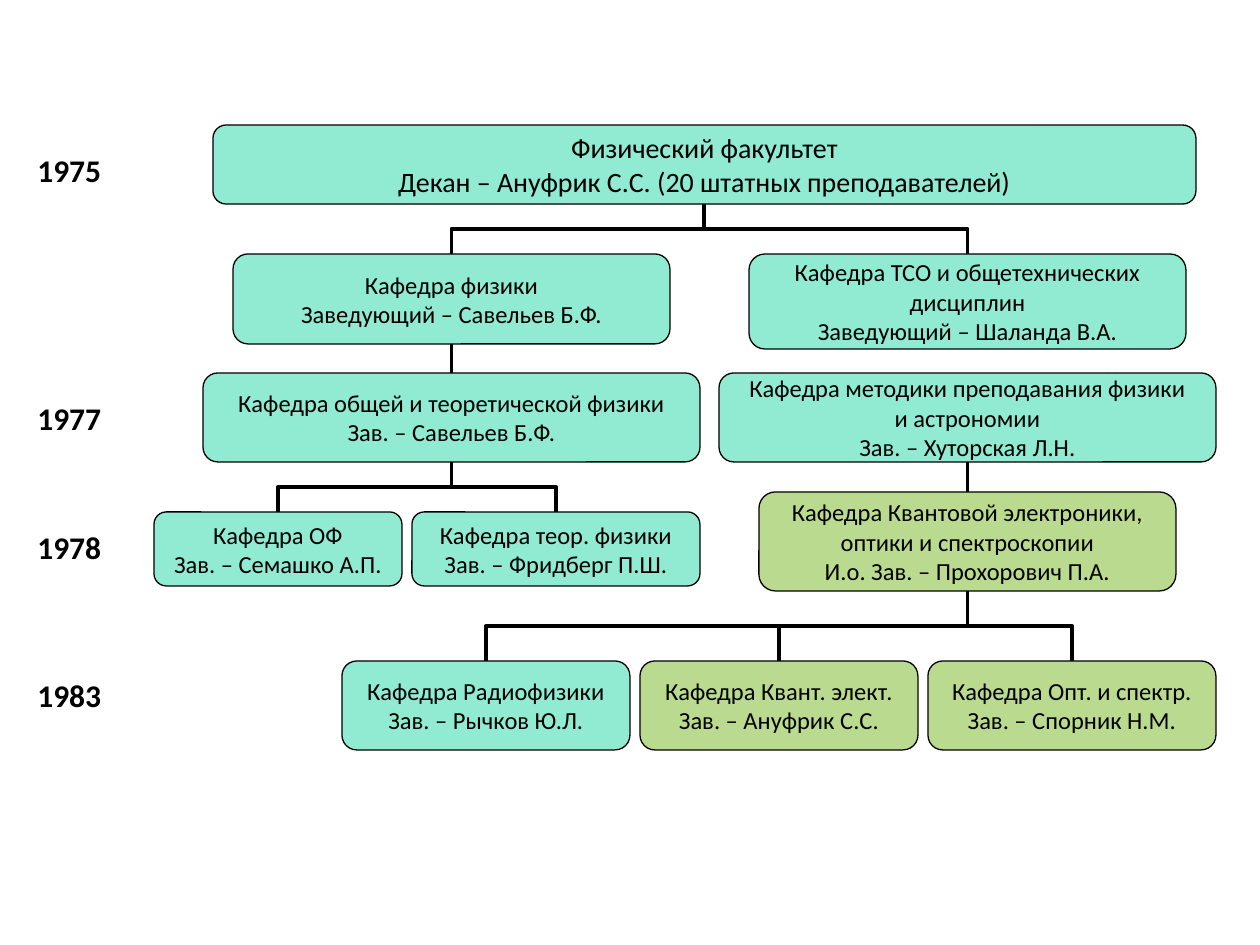
from typing import NamedTuple

from lxml.etree import SubElement
from pptx import Presentation
from pptx.dml.color import RGBColor
from pptx.enum.shapes import MSO_CONNECTOR, MSO_SHAPE
from pptx.enum.text import MSO_ANCHOR, PP_ALIGN
from pptx.oxml.ns import qn
from pptx.util import Pt

EMU_PER_PX = 914400 / 126
COLORS = {"mint": "91EAD2", "green": "B9DA8F", "black": "000000"}


class Box(NamedTuple):
    left: float
    top: float
    width: float
    height: float

    def within(self, region):
        return Box(region.left + self.left, region.top + self.top, self.width, self.height)

    @property
    def center(self):
        return self.left + self.width / 2

    @property
    def bottom(self):
        return self.top + self.height


# unit: (box relative to the chart, fill, lines)
UNITS = {
    "faculty": (Box(59, 0, 983, 79), "mint",
                ["Физический факультет", "Декан – Ануфрик С.С. (20 штатных преподавателей)"]),
    "physics": (Box(79, 129, 437, 90), "mint",
                ["Кафедра физики", "Заведующий – Савельев Б.Ф."]),
    "technical": (Box(595, 129, 437, 95), "mint",
                  ["Кафедра ТСО и общетехнических", "дисциплин", "Заведующий – Шаланда В.А."]),
    "general": (Box(49, 248, 497, 89), "mint",
                ["Кафедра общей и теоретической физики", "Зав. – Савельев Б.Ф."]),
    "methods": (Box(565, 248, 497, 89), "mint",
                ["Кафедра методики преподавания физики", "и астрономии", "Зав. – Хуторская Л.Н."]),
    "quantum": (Box(605, 367, 417, 99), "green",
                ["Кафедра Квантовой электроники,", "оптики и спектроскопии",
                 "И.о. Зав. – Прохорович П.А."]),
    "general_only": (Box(0, 387, 248, 74), "mint",
                     ["Кафедра ОФ", "Зав. – Семашко А.П."]),
    "theoretical": (Box(258, 387, 288, 74), "mint",
                    ["Кафедра теор. физики", "Зав. – Фридберг П.Ш."]),
    "radio": (Box(188, 536, 288, 89), "mint",
              ["Кафедра Радиофизики", "Зав. – Рычков Ю.Л."]),
    "electronics": (Box(486, 536, 278, 89), "green",
                    ["Кафедра Квант. элект.", "Зав. – Ануфрик С.С."]),
    "optics": (Box(774, 536, 288, 89), "green",
               ["Кафедра Опт. и спектр.", "Зав. – Спорник Н.М."]),
}
SUCCESSORS = {
    "faculty": ["physics", "technical"],
    "physics": ["general"],
    "general": ["general_only", "theoretical"],
    "methods": ["quantum"],
    "quantum": ["radio", "electronics", "optics"],
}
YEAR_TOPS = {"1975": 0, "1977": 248, "1978": 377, "1983": 525}


def px(length):
    return round(length * EMU_PER_PX)


def emu(box):
    return [px(length) for length in box]


def color(name):
    return RGBColor.from_string(COLORS[name])


def write(frame, lines, size=14, bold=False, align=PP_ALIGN.LEFT,
          anchor=MSO_ANCHOR.TOP, wrap=True):
    frame.word_wrap = wrap
    frame.vertical_anchor = anchor
    for index, line in enumerate(lines):
        paragraph = frame.add_paragraph() if index else frame.paragraphs[0]
        paragraph.alignment = align
        run = paragraph.add_run()
        run.text = line
        run.font.name = "Calibri"
        run.font.size = Pt(size)
        run.font.bold = bold
        run.font.color.rgb = color("black")


def add_unit(slide, box, fill, lines, size):
    unit = slide.shapes.add_shape(MSO_SHAPE.ROUNDED_RECTANGLE, *emu(box))
    unit.shadow.inherit = False
    unit.fill.solid()
    unit.fill.fore_color.rgb = color(fill)
    unit.line.color.rgb = color("black")
    unit.line.width = Pt(0.75)
    write(unit.text_frame, lines, size=size, align=PP_ALIGN.CENTER,
          anchor=MSO_ANCHOR.MIDDLE, wrap=False)


def add_branch(slide, parent, child):
    """Join the bottom of parent to the top of child, leaving vertically."""
    run, drop = child.center - parent.center, child.top - parent.bottom
    if run == 0:
        kind, angle = MSO_CONNECTOR.STRAIGHT, 0
        ends = (parent.center, parent.bottom, child.center, child.top)
    else:
        # An elbow leaves sideways, so it is laid flat about its centre and turned.
        kind = MSO_CONNECTOR.ELBOW
        angle = 270 if run > 0 else 90
        mid_x = (parent.center + child.center) / 2
        mid_y = (parent.bottom + child.top) / 2
        reach = drop / 2 if run > 0 else -drop / 2
        ends = (mid_x + reach, mid_y - abs(run) / 2, mid_x - reach, mid_y + abs(run) / 2)
    branch = slide.shapes.add_connector(kind, *emu(ends))
    branch.rotation = angle
    branch.line.color.rgb = color("black")
    branch.line.width = Pt(2.25)
    SubElement(branch._element.spPr, qn("a:effectLst"))


def add_org_chart(slide, region):
    boxes = {name: box.within(region) for name, (box, _, _) in UNITS.items()}
    for parent, children in SUCCESSORS.items():
        for child in children:
            add_branch(slide, boxes[parent], boxes[child])
    for name, (_, fill, lines) in UNITS.items():
        add_unit(slide, boxes[name], fill, lines, size=16 if name == "faculty" else 14)


def add_years(slide, region):
    for year, top in YEAR_TOPS.items():
        box = Box(0, top, region.width, 50).within(region)
        label = slide.shapes.add_textbox(*emu(box))
        write(label.text_frame, [year], size=18, bold=True)


def main():
    presentation = Presentation()
    presentation.slide_width, presentation.slide_height = px(1260), px(945)
    slide = presentation.slides.add_slide(presentation.slide_layouts[6])
    add_org_chart(slide, Box(154, 125, 1062, 625))
    add_years(slide, Box(25, 145, 128, 575))
    presentation.save("out.pptx")


if __name__ == "__main__":
    main()
